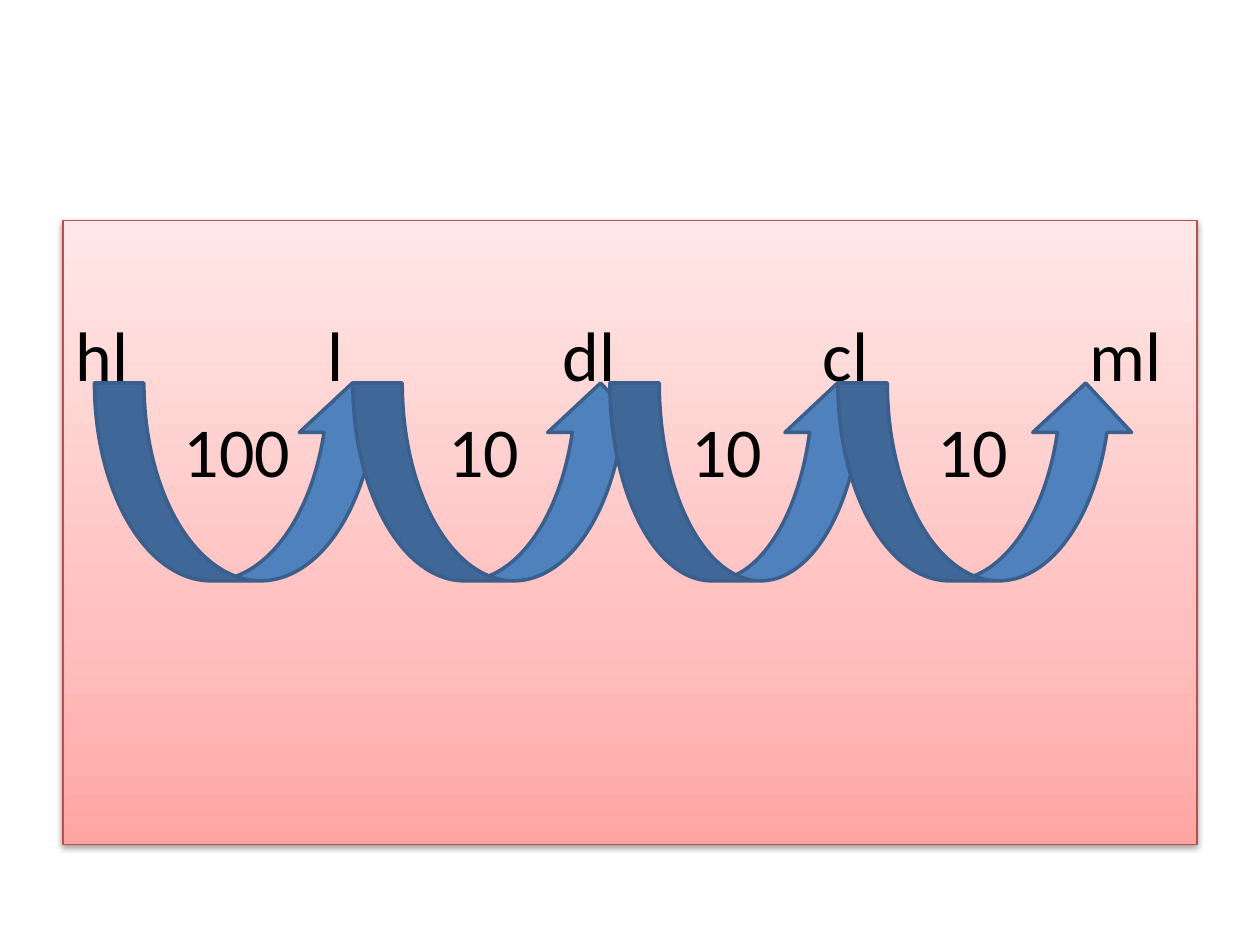
from copy import deepcopy

from lxml import etree
from pptx import Presentation
from pptx.dml.color import RGBColor
from pptx.enum.shapes import MSO_SHAPE
from pptx.enum.text import MSO_ANCHOR, PP_ALIGN
from pptx.oxml.ns import qn
from pptx.util import Inches, Pt

RECTANGLE = MSO_SHAPE.RECTANGLE
CURVED_ARROW = MSO_SHAPE.CURVED_UP_ARROW
TOP = MSO_ANCHOR.TOP
LEFT = PP_ALIGN.LEFT

PANEL_STOPS = [(0, "FFA6A5"), (0.35, "FFC0BF"), (1, "FFE7E7")]
UNITS = (["hl", "l", "dl", "cl", "ml"], [2, 3.87, 5.93, 8.05])
FACTORS = (["", "100", "10", "10", "10"], [0.86, 2.96, 4.89, 6.84])
ARROWS = [(0.75, 2.44), (2.8, 2.36), (4.84, 2.2), (6.65, 2.36)]


def color(hex_value):
    return RGBColor.from_string(hex_value)


class SlideBuilder:
    font_name = "Calibri"
    font_size = 40
    text_color = "000000"
    arrow_fill = "4F81BD"
    arrow_line = "3A5F8C"
    panel_line = "BF4C48"

    def __init__(self, slide):
        self.slide = slide

    def shape(self, kind, left, top, width, height, line, line_width):
        shape = self.slide.shapes.add_shape(
            kind, Inches(left), Inches(top), Inches(width), Inches(height)
        )
        shape.line.color.rgb = color(line)
        shape.line.width = Pt(line_width)
        shape.shadow.inherit = False
        return shape

    def panel(self, left, top, width, height):
        shape = self.shape(RECTANGLE, left, top, width, height, self.panel_line, 0.75)
        self.gradient(shape, PANEL_STOPS)
        self.shadow(shape)
        return shape

    def gradient(self, shape, stops):
        shape.fill.gradient()
        shape.fill.gradient_angle = 90
        stop_list = shape.element.spPr.find(f".//{qn('a:gsLst')}")
        while len(stop_list) < len(stops):
            stop_list.append(deepcopy(stop_list[0]))
        for stop, (position, hex_value) in zip(shape.fill.gradient_stops, stops):
            stop.position = position
            stop.color.rgb = color(hex_value)

    def shadow(self, shape):
        effects = shape.element.spPr.find(qn("a:effectLst"))
        shadow = etree.SubElement(
            effects, qn("a:outerShdw"), blurRad=str(Pt(3.1)), dist=str(Pt(1.6)),
            dir="5400000", rotWithShape="0",
        )
        shade = etree.SubElement(shadow, qn("a:srgbClr"), val="000000")
        etree.SubElement(shade, qn("a:alpha"), val="38000")

    def rows(self, shape, rows, top_margin, gap):
        frame = shape.text_frame
        frame.word_wrap = True
        frame.vertical_anchor = TOP
        frame.margin_top = Inches(top_margin)
        for index, (words, tabs) in enumerate(rows):
            paragraph = frame.add_paragraph() if index else frame.paragraphs[0]
            paragraph.text = "\t".join(words)
            paragraph.alignment = LEFT
            paragraph.space_before = Pt(gap if index else 0)
            paragraph.font.name = self.font_name
            paragraph.font.size = Pt(self.font_size)
            paragraph.font.color.rgb = color(self.text_color)
            self.tab_stops(paragraph, tabs)

    def tab_stops(self, paragraph, positions):
        properties = paragraph.font._element.getparent()
        tab_list = etree.Element(qn("a:tabLst"))
        for position in positions:
            etree.SubElement(tab_list, qn("a:tab"), pos=str(Inches(position)), algn="l")
        properties.insert(list(properties).index(paragraph.font._element), tab_list)

    def arrow(self, left, top, width, height):
        shape = self.shape(CURVED_ARROW, left, top, width, height, self.arrow_line, 2)
        shape.fill.solid()
        shape.fill.fore_color.rgb = color(self.arrow_fill)


def main():
    presentation = Presentation()
    presentation.slide_width = Inches(10)
    presentation.slide_height = Inches(7.5)
    builder = SlideBuilder(presentation.slides.add_slide(presentation.slide_layouts[6]))

    panel = builder.panel(0.5, 1.75, 9, 4.95)
    builder.rows(panel, [UNITS, FACTORS], top_margin=0.72, gap=7)
    for left, width in ARROWS:
        builder.arrow(left, 3.04, width, 1.57)

    presentation.save("out.pptx")


if __name__ == "__main__":
    main()
